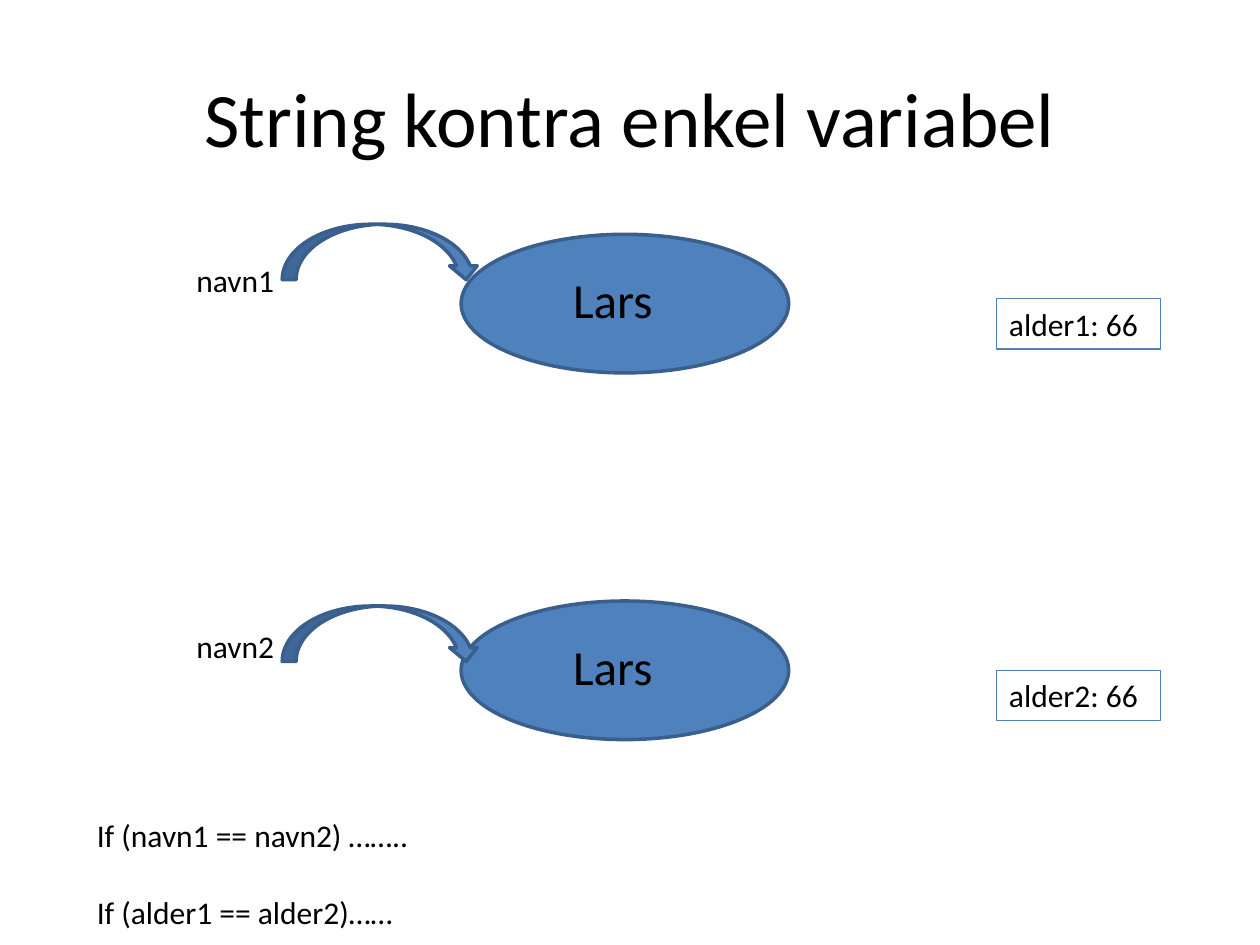
from pptx import Presentation
from pptx.dml.color import RGBColor
from pptx.enum.shapes import MSO_SHAPE as Shape
from pptx.enum.text import MSO_ANCHOR as Anchor, MSO_AUTO_SIZE as AutoSize, PP_ALIGN as Align
from pptx.util import Inches, Pt

TITLE = "String kontra enkel variabel"
# Each row: name, its string, number; then tops of ellipse, arrow and number box
ROWS = [
    ("navn1", "Lars", "alder1: 66", 1.86, 1.78, 2.37),
    ("navn2", "Lars", "alder2: 66", 4.77, 4.81, 5.32),
]
COMPARISONS = ["If (navn1 == navn2) ……..", "If (alder1 == alder2)……"]

FONT = "Calibri"
BLACK, BLUE, DARK_BLUE = "000000", "4F81BD", "3A5F8C"


def rgb(value):
    return RGBColor.from_string(value)


def write(shape, lines, size, align=Align.LEFT, wrap=True, gap=0):
    """Fill a shape with one paragraph per line, gap points apart."""
    frame = shape.text_frame
    frame.text = "\n".join(lines)
    frame.word_wrap = wrap
    for index, paragraph in enumerate(frame.paragraphs):
        paragraph.alignment = align
        if index:
            paragraph.space_before = Pt(gap)
        font = paragraph.runs[0].font
        font.name, font.size, font.color.rgb = FONT, Pt(size), rgb(BLACK)


def add_text(slide, box, lines, size, **options):
    label = slide.shapes.add_textbox(*map(Inches, box))
    write(label, lines, size, **options)
    label.text_frame.auto_size = AutoSize.SHAPE_TO_FIT_TEXT


def add_outlined(slide, preset, box, fill, line, width):
    shape = slide.shapes.add_shape(preset, *map(Inches, box))
    shape.shadow.inherit = False
    if fill:
        shape.fill.solid()
        shape.fill.fore_color.rgb = rgb(fill)
    else:
        shape.fill.background()
    shape.line.color.rgb = rgb(line)
    shape.line.width = Pt(width)
    return shape


def main():
    prs = Presentation()
    prs.slide_width, prs.slide_height = Inches(10), Inches(7.5)
    slide = prs.slides.add_slide(prs.slide_layouts[5])

    title = slide.shapes.title
    title.left, title.top, title.width, title.height = map(Inches, (0.5, 0.3, 9, 1.25))
    write(title, [TITLE], 44, align=Align.CENTER)
    title.text_frame.vertical_anchor = Anchor.MIDDLE

    for name, string, number, ellipse_top, arrow_top, number_top in ROWS:
        add_outlined(slide, Shape.OVAL, (3.66, ellipse_top, 2.6, 1.1), BLUE, DARK_BLUE, 2)
        add_text(slide, (1.46, ellipse_top + 0.16, 1.57, 0.4), [name], 18)
        add_text(slide, (4.45, ellipse_top + 0.23, 1.57, 0.57), [string], 28)
        add_outlined(slide, Shape.CURVED_DOWN_ARROW, (2.24, arrow_top, 1.57, 0.44),
                     BLUE, DARK_BLUE, 2)
        number_box = add_outlined(slide, Shape.RECTANGLE, (7.91, number_top, 1.3, 0.4),
                                  None, BLUE, 0.75)
        write(number_box, [number], 18, wrap=False)
        number_box.text_frame.vertical_anchor = Anchor.TOP
        number_box.text_frame.auto_size = AutoSize.SHAPE_TO_FIT_TEXT

    add_text(slide, (0.67, 6.43, 2.7, 1.01), COMPARISONS, 18, wrap=False, gap=22)
    prs.save("out.pptx")


if __name__ == "__main__":
    main()
